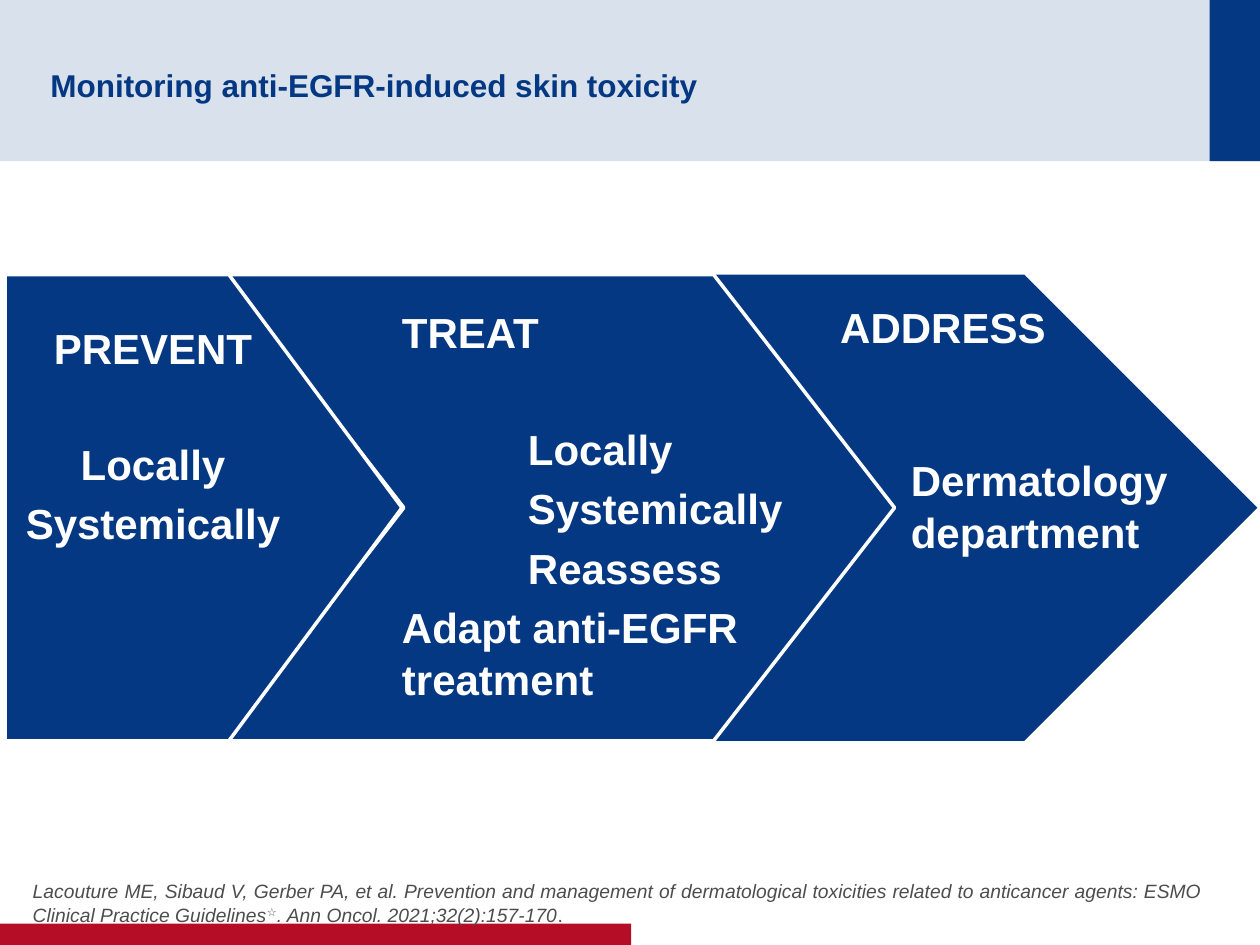
from lxml import etree
from pptx import Presentation
from pptx.dml.color import RGBColor
from pptx.enum.shapes import MSO_SHAPE
from pptx.enum.text import MSO_ANCHOR, MSO_AUTO_SIZE, PP_ALIGN
from pptx.oxml.ns import qn
from pptx.util import Inches, Pt

RECT, CHEVRON, PLATE = MSO_SHAPE.RECTANGLE, MSO_SHAPE.CHEVRON, MSO_SHAPE.PENTAGON
LEFT, CENTER, JUSTIFY = PP_ALIGN.LEFT, PP_ALIGN.CENTER, PP_ALIGN.JUSTIFY
TOP, MIDDLE, BOTTOM = MSO_ANCHOR.TOP, MSO_ANCHOR.MIDDLE, MSO_ANCHOR.BOTTOM
FIXED = MSO_AUTO_SIZE.NONE
BLUE, RED, WHITE, GRAY = "043882", "B60D27", "FFFFFF", "4D4D4D"


def color(code):
    return RGBColor.from_string(code)


def shape(slide, kind, box, fill, line=None, adj=None, alpha=None):
    item = slide.shapes.add_shape(kind, *map(Inches, box))
    item.shadow.inherit = False
    item.fill.solid()
    item.fill.fore_color.rgb = color(fill)
    if alpha:
        tint = item.element.spPr.find(".//" + qn("a:srgbClr"))
        etree.SubElement(tint, qn("a:alpha")).set("val", str(alpha * 1000))
    if line:
        item.line.color.rgb = color(line)
        item.line.width = Pt(2)
    else:
        item.line.fill.background()
    if adj:
        item.adjustments[0] = adj


def frame(slide, item, box, anchor=TOP, inset=(0, 0.05, 0, 0.05)):
    slide.shapes.element.append(item.element)
    item.left, item.top, item.width, item.height = map(Inches, box)
    body = item.text_frame
    body.word_wrap, body.auto_size = True, FIXED
    body.vertical_anchor = anchor
    (body.margin_left, body.margin_top,
     body.margin_right, body.margin_bottom) = map(Inches, inset)
    return body


def write(para, text, size=24, tone=WHITE, bold=True, italic=False,
          align=LEFT, after=4, indent=0, base=0):
    para.alignment = align
    para.line_spacing = 1.04
    para.space_before, para.space_after = Pt(0), Pt(after)
    props = para._p.get_or_add_pPr()
    props.set("marL", str(Inches(indent)))
    props.set("indent", "0")
    if props.find(qn("a:buNone")) is None:
        etree.SubElement(props, qn("a:buNone"))
    run = para.add_run()
    run.text = text
    font = run.font
    font.name, font.size = "Arial", Pt(size)
    font.bold, font.italic = bold, italic
    font.color.rgb = color(tone)
    if base:
        run._r.get_or_add_rPr().set("baseline", str(base * 1000))


def header(slide, box):
    left, top, width, height = box
    tab = 0.4
    shape(slide, RECT, box, BLUE, alpha=15)
    shape(slide, RECT, (left + width - tab, top, tab, height), BLUE)
    body = frame(slide, slide.shapes.title, (left + 0.4, top + 0.2, 9.01, 0.88),
                 MIDDLE, (0, 0.05, 0, 0))
    write(body.paragraphs[0], "Monitoring anti-EGFR-induced skin toxicity",
          size=18, tone=BLUE)


def arrows(slide, box):
    left, top, width, height = box
    shape(slide, CHEVRON, (left + 5.2, top, width - 5.2, height), BLUE)
    shape(slide, CHEVRON, (left + 1.73, top, 5.33, height), BLUE, WHITE, 0.388)
    shape(slide, PLATE, (left, top, 3.15, height), BLUE, WHITE, 0.436)


def step(slide, item, box, head, gap, rows, align=LEFT, after=4, **place):
    body = frame(slide, item, box, **place)
    write(body.paragraphs[0], head, align=align, after=gap)
    for text, indent in rows:
        write(body.add_paragraph(), text, align=align, after=after, indent=indent)


def source(slide, item, box):
    body = frame(slide, item, box, BOTTOM, (0, 0, 0, 0))
    parts = [
        ("Lacouture ME, Sibaud V, Gerber PA, et al. Prevention and management of "
         "dermatological toxicities related to anticancer agents: ESMO Clinical "
         "Practice Guidelines", True, 0),
        ("☆", True, 30),
        (". Ann Oncol. 2021;32(2):157-170", True, 0),
        (".", False, 0),
    ]
    for text, italic, base in parts:
        write(body.paragraphs[0], text, size=11, tone=GRAY, bold=False,
              italic=italic, align=JUSTIFY, base=base)


def main():
    deck = Presentation()
    deck.slide_width, deck.slide_height = Inches(10), Inches(7.5)
    slide = deck.slides.add_slide(deck.slide_layouts[4])
    first, second, third, spare = list(slide.placeholders)[1:]
    spare.element.getparent().remove(spare.element)

    header(slide, (0, 0, 10, 1.28))
    shape(slide, RECT, (0, 7.33, 5.01, 0.17), RED)
    arrows(slide, (0.04, 2.18, 9.94, 3.7))
    step(slide, first, (0.11, 2.49, 2.21, 0.51), "PREVENT", 36.6,
         [("Locally", 0), ("Systemically", 0)], align=CENTER)
    step(slide, second, (3.19, 2.37, 3.39, 0.36), "TREAT", 36.6,
         [("Locally", 1), ("Systemically", 1), ("Reassess", 1),
          ("Adapt anti-EGFR treatment", 0)])
    source(slide, third, (0.26, 6.82, 9.29, 0.53))
    box = (6.57, 2.33, 3.19, 2.12)
    note = slide.shapes.add_textbox(*map(Inches, box))
    step(slide, note, box, "ADDRESS", 57.4,
         [("Dermatology", 0.56), ("department", 0.56)], after=0,
         inset=(0.1, 0.05, 0.1, 0.05))
    deck.save("out.pptx")


if __name__ == "__main__":
    main()
